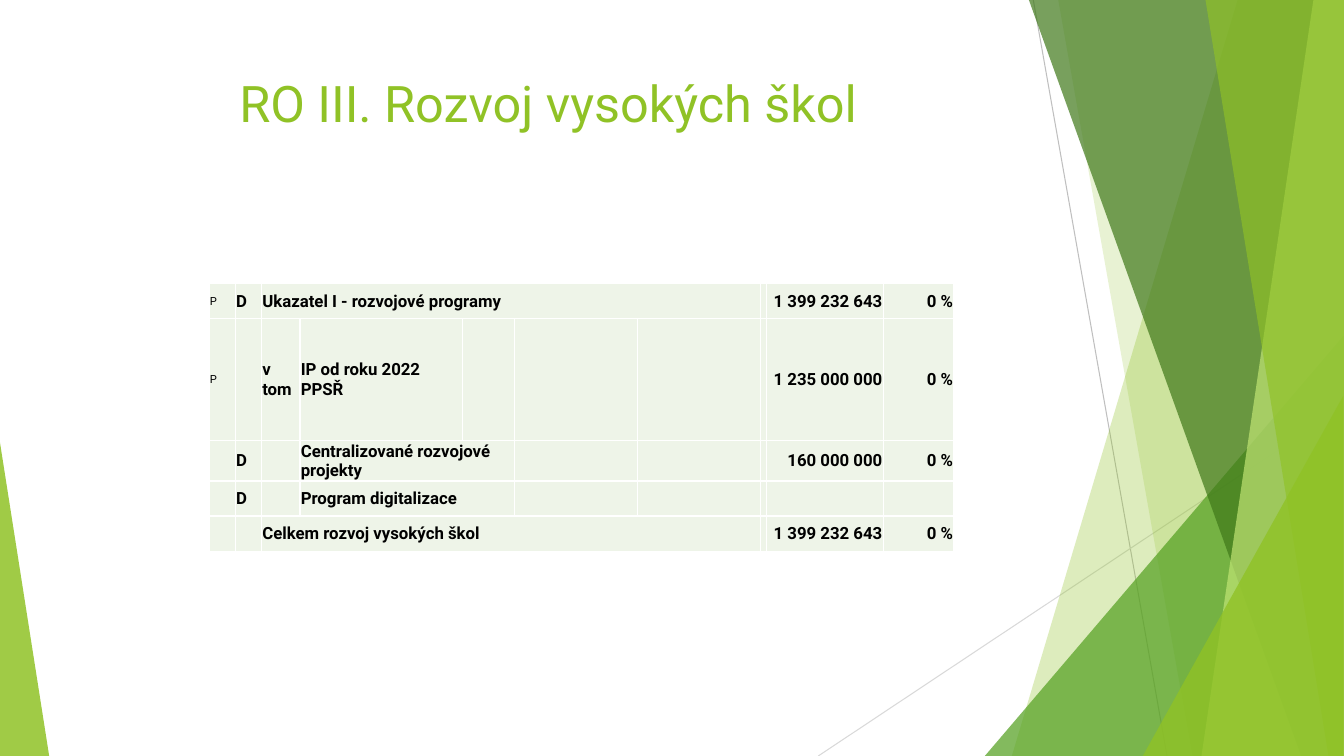
from lxml import etree
from pptx import Presentation
from pptx.dml.color import RGBColor
from pptx.enum.shapes import MSO_CONNECTOR, MSO_SHAPE
from pptx.enum.text import MSO_ANCHOR, PP_ALIGN
from pptx.oxml.ns import qn
from pptx.util import Cm, Pt

STRAIGHT, TRIANGLE = MSO_CONNECTOR.STRAIGHT, MSO_SHAPE.ISOSCELES_TRIANGLE
LEFT, CENTER, RIGHT = PP_ALIGN.LEFT, PP_ALIGN.CENTER, PP_ALIGN.RIGHT
TOP, MIDDLE = MSO_ANCHOR.TOP, MSO_ANCHOR.MIDDLE
W, H = 33.87, 19.05
FONT = "Roboto"
COLORS = {
    "lime": "90C226", "green": "54A021", "dark": "3F7819", "pale": "C0E474",
    "grey": "BFBFBF", "light_grey": "D9D9D9",
    "cell": "EEF4E8", "border": "FFFFFF", "text": "000000",
}


def rgb(name):
    return RGBColor.from_string(COLORS[name])


def write(tf, text, align, **formats):
    p = tf.paragraphs[0]
    p.alignment = align
    r = p.add_run()
    r.text = text
    r.font.name = FONT
    r.font.color.rgb = rgb(formats.pop("color"))
    for name, value in formats.items():
        setattr(r.font, name, value)


prs = Presentation()
prs.slide_width, prs.slide_height = Cm(W), Cm(H)
s = prs.slides.add_slide(prs.slide_layouts[5])

# Thin lines behind the green facets
for x1, y1, x2, y2, color, width in [
    (26.04, 0, 29.41, H, "grey", 0.75),
    (W, 10.24, 20.62, H, "light_grey", 0.75),
]:
    line = s.shapes.add_connector(STRAIGHT, Cm(x1), Cm(y1), Cm(x2), Cm(y2))
    line.line.color.rgb = rgb(color)
    line.line.width = Pt(width)
    etree.SubElement(line._element.spPr, qn("a:effectLst"))

# Facets: (top x, bottom x) reaches the right edge;
# (left, top, width, height, apex) is a triangle
facets = [
    ((31.19, 25.5), "lime", 30),
    ((26.67, 30.05), "lime", 20),
    ((24.82, 8.46, 9.04, 10.59, 1), "green", 72),
    ((25.93, 32.79), "dark", 70),
    ((33.1, 30.28), "pale", 70),
    ((30.38, 33.48), "lime", 65),
    ((28.8, 9.98, 5.05, 9.07, 1), "lime", 80),
    ((0, 11.15, 1.24, 7.9, 0), "lime", 85),
]
for geometry, color, opacity in facets:
    if len(geometry) == 2:
        top_x, bottom_x = geometry
        outline = s.shapes.build_freeform(Cm(top_x), 0)
        outline.add_line_segments(
            [(Cm(W), 0), (Cm(W), Cm(H)), (Cm(bottom_x), Cm(H))], close=True)
        facet = outline.convert_to_shape()
    else:
        *box, apex = geometry
        facet = s.shapes.add_shape(TRIANGLE, *map(Cm, box))
        facet.adjustments[0] = apex
    facet.shadow.inherit = False
    facet.line.fill.background()
    facet.fill.solid()
    facet.fill.fore_color.rgb = rgb(color)
    srgb = facet._element.spPr.find(".//" + qn("a:srgbClr"))
    etree.SubElement(srgb, qn("a:alpha"), val=str(opacity * 1000))

title = s.shapes.title
title.left, title.top, title.width, title.height = map(Cm, (1.88, 1.7, 23.88, 3.66))
title.text_frame.vertical_anchor = TOP
title.text_frame.word_wrap = True
write(title.text_frame, "RO III. Rozvoj vysokých škol", CENTER, size=Pt(36), color="lime")

# Budget table
col_widths = [0.66, 0.66, 0.97, 4.09, 1.32, 3.1, 3.1, 0.13, 2.95, 1.78]
row_heights = [0.88, 3.08, 1.02, 0.88, 0.9]
budget = [
    {0: "P", 1: "D", 2: "Ukazatel I - rozvojové programy", 8: "1 399 232 643", 9: "0 %"},
    {0: "P", 2: "v tom", 3: "IP od roku 2022 PPSŘ", 8: "1 235 000 000", 9: "0 %"},
    {1: "D", 3: "Centralizované rozvojové projekty", 8: "160 000 000", 9: "0 %"},
    {1: "D", 3: "Program digitalizace"},
    {2: "Celkem rozvoj vysokých škol", 8: "1 399 232 643", 9: "0 %"},
]
merges = [(0, 2, 6), (2, 3, 4), (3, 3, 4), (4, 2, 6)]

table = s.shapes.add_table(
    len(row_heights), len(col_widths), Cm(5.27), Cm(7.14),
    Cm(sum(col_widths)), Cm(sum(row_heights))).table
table.first_row = table.horz_banding = False
for column, width in zip(table.columns, col_widths):
    column.width = Cm(width)
for row, height in zip(table.rows, row_heights):
    row.height = Cm(height)

for i, texts in enumerate(budget):
    for j in range(len(col_widths)):
        cell = table.cell(i, j)
        cell.vertical_anchor = MIDDLE
        cell.margin_left = cell.margin_right = cell.margin_top = Cm(0.02)
        cell.margin_bottom = 0
        tcPr = cell._tc.get_or_add_tcPr()
        for side in ("lnL", "lnR", "lnT", "lnB"):
            ln = etree.SubElement(tcPr, qn("a:" + side), w=str(Pt(1)))
            fill = etree.SubElement(ln, qn("a:solidFill"))
            etree.SubElement(fill, qn("a:srgbClr"), val=COLORS["border"])
        cell.fill.solid()
        cell.fill.fore_color.rgb = rgb("cell")
        if j in texts:
            write(cell.text_frame, texts[j], RIGHT if j >= 8 else LEFT,
                  size=Pt(12 if j else 8), bold=j > 0, color="text")

for row, first, last in merges:
    table.cell(row, first).merge(table.cell(row, last))

prs.save("out.pptx")
